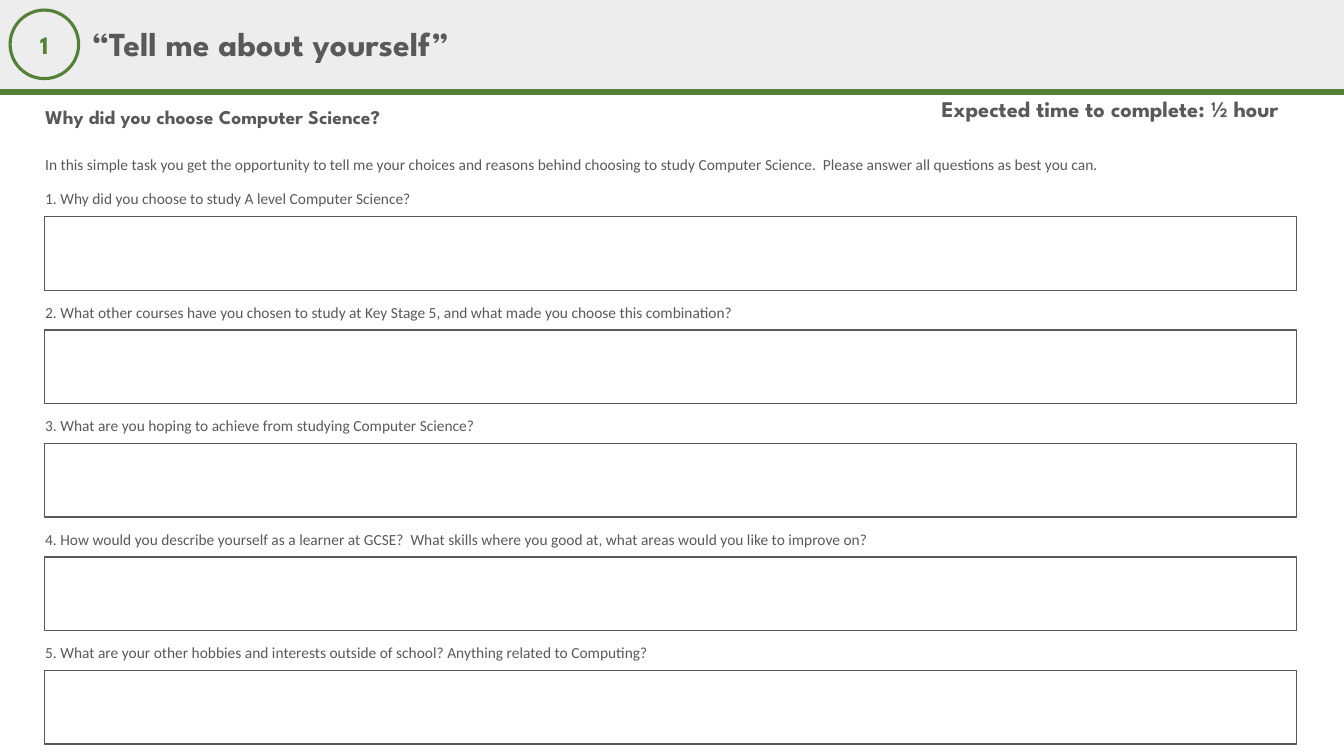
from lxml.etree import SubElement
from pptx import Presentation
from pptx.dml.color import RGBColor
from pptx.enum.shapes import MSO_CONNECTOR as Connector, MSO_SHAPE as Shape
from pptx.enum.text import MSO_ANCHOR as Anchor, MSO_AUTO_SIZE as AutoSize, PP_ALIGN as Align
from pptx.oxml.ns import qn
from pptx.util import Inches, Pt

# Content
NUMBER = "1"
TITLE = "“Tell me about yourself”"
DURATION = "Expected time to complete: ½ hour"
HEADING = "Why did you choose Computer Science?"
INTRO = ("In this simple task you get the opportunity to tell me your choices and reasons "
         "behind choosing to study Computer Science.  Please answer all questions as best you can.")
QUESTIONS = [
    "Why did you choose to study A level Computer Science?",
    "What other courses have you chosen to study at Key Stage 5, "
    "and what made you choose this combination?",
    "What are you hoping to achieve from studying Computer Science?",
    "How would you describe yourself as a learner at GCSE?  "
    "What skills where you good at, what areas would you like to improve on?",
    "What are your other hobbies and interests outside of school? Anything related to Computing?",
]

COLOURS = {"band": "EDEDED", "green": "538135", "text": "595959"}
DISPLAY, BODY = "League Spartan", "Calibri"

# Layout in inches
WIDTH, HEIGHT = 13.33, 7.5
BAND_HEIGHT = 0.91
TEXT_LEFT = 0.35
LABEL_WIDTH, LABEL_HEIGHT = 10.7, 0.29
ANSWER_LEFT, ANSWER_WIDTH, ANSWER_HEIGHT = 0.44, 12.42, 0.73
FIRST_LABEL, LABEL_TO_ANSWER = 1.83, 0.32
LAST_LABEL = 6.33
ROW_PITCH = (LAST_LABEL - FIRST_LABEL) / (len(QUESTIONS) - 1)

presentation = Presentation()
presentation.slide_width, presentation.slide_height = Inches(WIDTH), Inches(HEIGHT)
slide = presentation.slides.add_slide(presentation.slide_layouts[6])


def colour(name):
    return RGBColor.from_string(COLOURS[name])


def add_box(kind, left, top, width, height, fill=None, line=None, weight=1):
    shape = slide.shapes.add_shape(kind, *map(Inches, (left, top, width, height)))
    shape.shadow.inherit = False
    if fill:
        shape.fill.solid()
        shape.fill.fore_color.rgb = colour(fill)
    else:
        shape.fill.background()
    if line:
        shape.line.color.rgb = colour(line)
        shape.line.width = Pt(weight)
    else:
        shape.line.fill.background()
    return shape


def write(text, at=None, shape=None, size=11, font=BODY, ink="text", bold=False,
          anchor=Anchor.TOP, align=Align.LEFT, spacing=1, wrap=True, grow=False):
    """Write into a shape, or into a new text box placed at (left, top, width, height)."""
    shape = shape or slide.shapes.add_textbox(*map(Inches, at))
    frame = shape.text_frame
    frame.word_wrap = wrap
    frame.auto_size = AutoSize.SHAPE_TO_FIT_TEXT if grow else AutoSize.NONE
    frame.vertical_anchor = anchor
    paragraph = frame.paragraphs[0]
    paragraph.alignment, paragraph.line_spacing = align, spacing
    run = paragraph.add_run()
    run.text = text
    run.font.name, run.font.size, run.font.bold = font, Pt(size), bold
    run.font.color.rgb = colour(ink)


# Header band and rule
add_box(Shape.RECTANGLE, 0, 0, WIDTH, BAND_HEIGHT, fill="band")
rule = slide.shapes.add_connector(Connector.STRAIGHT, 0, Inches(BAND_HEIGHT),
                                  Inches(WIDTH), Inches(BAND_HEIGHT))
rule.line.color.rgb = colour("green")
rule.line.width = Pt(4.5)
SubElement(rule.line._get_or_add_ln().getparent(), qn("a:effectLst"))

# Task number and title
badge = add_box(Shape.OVAL, 0.1, 0.1, 0.68, 0.68, line="green", weight=2.25)
write(NUMBER, shape=badge, size=18, font=DISPLAY, ink="green", bold=True,
      anchor=Anchor.MIDDLE, align=Align.CENTER)
write(TITLE, at=(0.81, 0.09, 10.31, 0.73), size=24, font=DISPLAY, bold=True,
      anchor=Anchor.MIDDLE, spacing=0.9)

# Duration, heading and introduction
write(DURATION, at=(9.24, 0.93, 4.09, 0.4), size=16, font=DISPLAY, bold=True, spacing=0.9)
write(HEADING, at=(TEXT_LEFT, 0.99, 4.17, 0.4), size=13.9, font=DISPLAY, bold=True,
      anchor=Anchor.MIDDLE, spacing=0.7)
write(INTRO, at=(TEXT_LEFT, 1.49, LABEL_WIDTH, LABEL_HEIGHT), wrap=False, grow=True)

# Questions, each with an answer box
for row, question in enumerate(QUESTIONS):
    label_top = FIRST_LABEL + row * ROW_PITCH
    add_box(Shape.RECTANGLE, ANSWER_LEFT, label_top + LABEL_TO_ANSWER,
            ANSWER_WIDTH, ANSWER_HEIGHT, line="text")
    write(f"{row + 1}. {question}", at=(TEXT_LEFT, label_top, LABEL_WIDTH, LABEL_HEIGHT), grow=True)

presentation.save("out.pptx")
